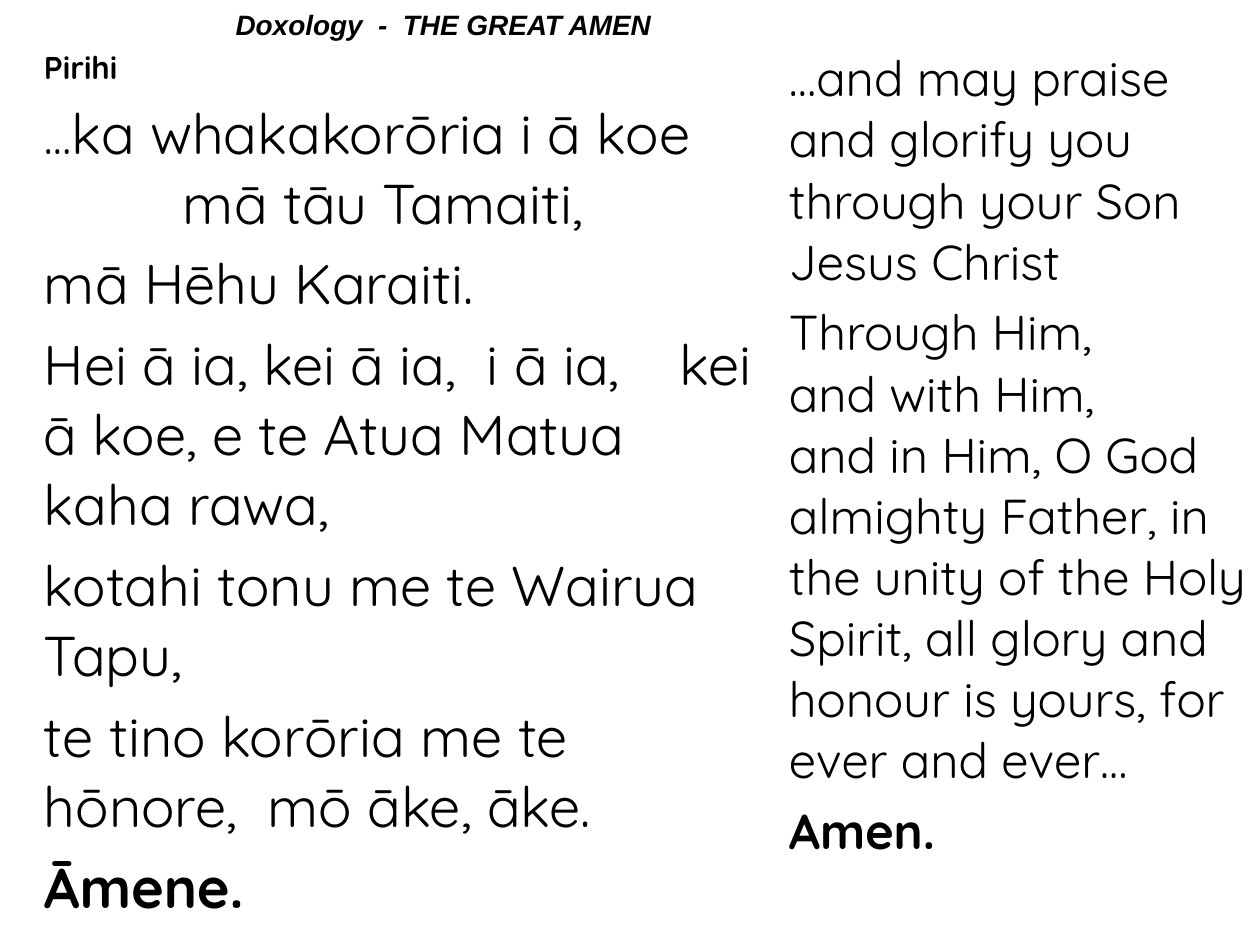
from lxml import etree
from pptx import Presentation
from pptx.dml.color import RGBColor
from pptx.enum.text import MSO_ANCHOR, PP_ALIGN
from pptx.oxml.ns import qn
from pptx.util import Pt

PX = 914400 / 126
BLACK = RGBColor(0x00, 0x00, 0x00)
LEFT = PP_ALIGN.LEFT
MIDDLE = MSO_ANCHOR.MIDDLE
TITLE_FONT = "Arial"
PRAYER_FONT = "Quicksand"


def px(length):
    return round(length * PX)


def add_text(paragraph, text, size, font=PRAYER_FONT, bold=False, italic=False):
    """Add text to a paragraph, with a line break at each newline."""
    for number, line in enumerate(text.split("\n")):
        if number:
            paragraph.add_line_break()
        run = paragraph.add_run()
        run.text = line
        run.font.size = Pt(size)
        run.font.name = font
        run.font.bold = bold
        run.font.italic = italic
        run.font.color.rgb = BLACK


presentation = Presentation()
presentation.slide_width = px(1260)
presentation.slide_height = px(945)
slide = presentation.slides.add_slide(presentation.slide_layouts[5])

title = slide.shapes.title
title.left, title.top, title.width, title.height = px(223), 0, px(716), px(48)
title.text_frame.vertical_anchor = MIDDLE
title.text_frame.paragraphs[0].alignment = LEFT
add_text(title.text_frame.paragraphs[0], "Doxology  -  THE GREAT AMEN", 16,
         font=TITLE_FONT, bold=True, italic=True)

table = slide.shapes.add_table(2, 2, px(34), px(45), px(1226), px(863)).table
table.first_row = False
table.horz_banding = False
for column, width in zip(table.columns, (745, 481)):
    column.width = px(width)
for row, height in zip(table.rows, (685, 178)):
    row.height = px(height)
for cell in table.iter_cells():
    cell.fill.background()
    cell.margin_left = cell.margin_right = px(10)
    cell.margin_top = cell.margin_bottom = px(3)

# Each paragraph is a list of (text, size, bold) runs.
maori = [
    [("Pirihi", 18, True)],
    [("…", 28, False), ("ka whakakorōria i ā koe mā tāu Tamaiti,", 32, False)],
    [("mā Hēhu Karaiti.", 32, False)],
    [("Hei ā ia, kei ā ia,  i ā ia,\tkei ā koe, e te Atua Matua kaha rawa,", 32, False)],
    [("kotahi tonu me te Wairua Tapu,", 32, False)],
    [("te tino korōria me te hōnore,  mō āke, āke.", 32, False)],
    [("Āmene.", 32, True)],
]
english = [
    [("…and may praise and glorify you through your Son Jesus Christ", 28, False)],
    [("Through Him,\nand with Him,\nand in Him, O God almighty Father, in the unity "
      "of the Holy Spirit, all glory and honour is yours, for ever and ever…", 28, False)],
    [("Amen.", 28, True)],
]

for column_index, (prayer, gap) in enumerate(((maori, 6), (english, 5.5))):
    text_frame = table.cell(0, column_index).text_frame
    for number, runs in enumerate(prayer):
        paragraph = text_frame.add_paragraph() if number else text_frame.paragraphs[0]
        paragraph.alignment = LEFT
        paragraph.space_before = Pt(gap if number else 0)
        for text, size, bold in runs:
            add_text(paragraph, text, size, bold=bold)

# The opening line hangs over its continuation; a tab stop sets the gap before "kei".
maori_paragraphs = table.cell(0, 0).text_frame.paragraphs
hanging = maori_paragraphs[1]._p.get_or_add_pPr()
hanging.set("marL", str(px(139)))
hanging.set("indent", str(-px(139)))
tab_list = etree.SubElement(maori_paragraphs[3]._p.get_or_add_pPr(), qn("a:tabLst"))
etree.SubElement(tab_list, qn("a:tab"), pos=str(px(636)), algn="l")

presentation.save("out.pptx")
